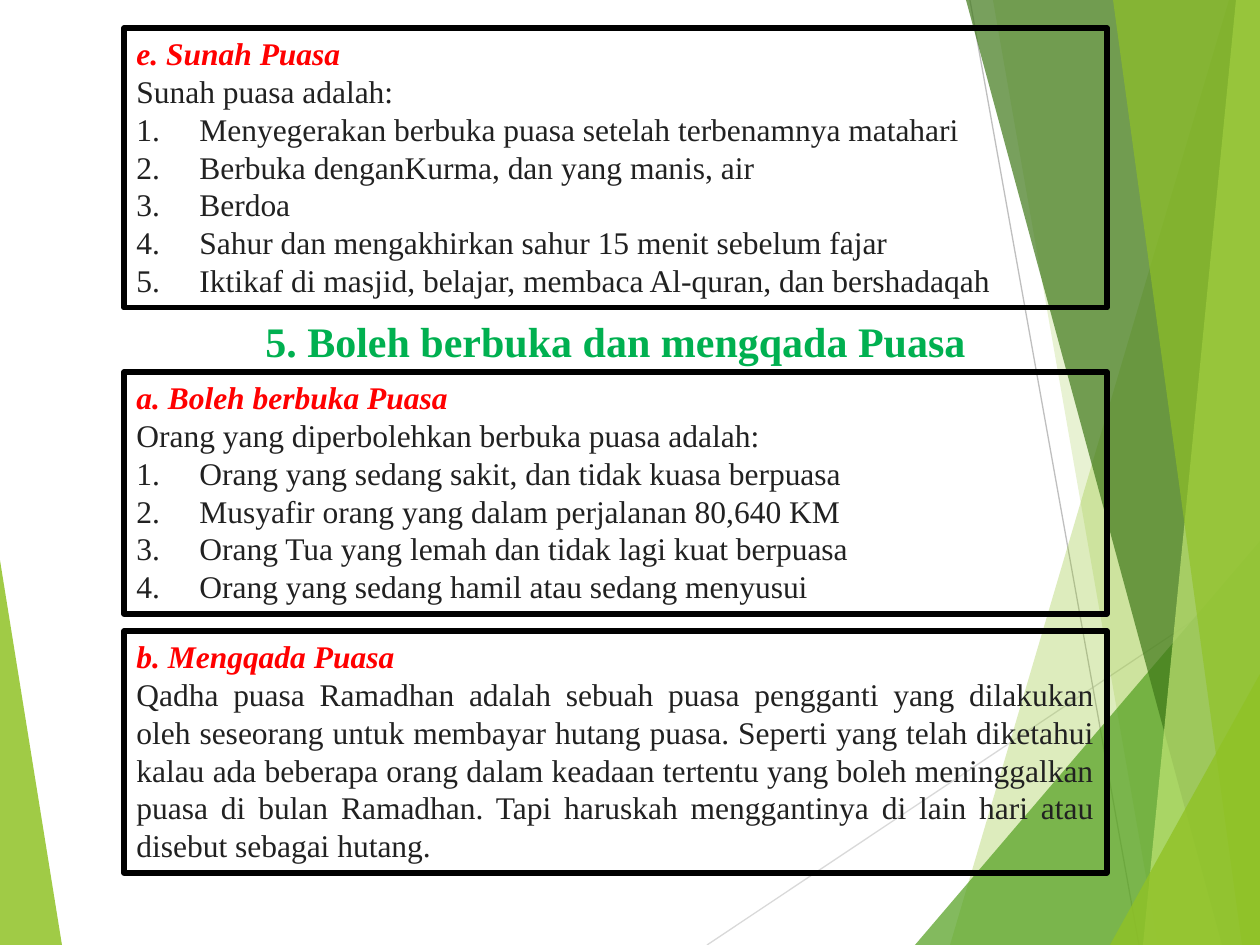
from lxml import etree
from pptx import Presentation, util as u
from pptx.dml.color import RGBColor
from pptx.enum import shapes, text
from pptx.oxml.ns import qn

PX = 914400 / 126
WIDTH, HEIGHT = 1260, 945
FONT = "Times New Roman"
COLORS = {
    "lime": "90C226", "green": "54A021", "dark": "3F7819", "pale": "C0E474",
    "grey": "BFBFBF", "light": "D9D9D9", "border": "000000",
    "heading": "FF0000", "body": "212121", "title": "00B050",
}

# colour, opacity in percent, corner points
LEFT_FACET = ("lime", 85, [(0, 560), (62, HEIGHT), (0, HEIGHT)])
RIGHT_FACETS = [
    ("lime", 30, [(1229, 0), (950, HEIGHT), (WIDTH, HEIGHT), (WIDTH, 0)]),
    ("lime", 20, [(993, 0), (1158, HEIGHT), (WIDTH, HEIGHT), (WIDTH, 0)]),
    ("green", 72, [(915, HEIGHT), (WIDTH, 541), (WIDTH, HEIGHT)]),
    ("dark", 70, [(966, 0), (1222, HEIGHT), (WIDTH, HEIGHT), (WIDTH, 0)]),
    ("pale", 70, [(1236, 0), (1143, HEIGHT), (WIDTH, HEIGHT), (WIDTH, 0)]),
    ("lime", 65, [(1113, 0), (1242, HEIGHT), (WIDTH, HEIGHT), (WIDTH, 0)]),
    ("lime", 80, [(1110, HEIGHT), (WIDTH, 674), (WIDTH, HEIGHT)]),
]
RAYS = [("light", (707, HEIGHT), (WIDTH, 576)), ("grey", (970, 0), (1139, HEIGHT))]

BOX_LEFT, BOX_WIDTH = 124, 983
TITLE = (309, 57, "5. Boleh berbuka dan mengqada Puasa")
# top, height, heading, introduction, numbered items
BOXES = [
    (28, 280, "e. Sunah Puasa", "Sunah puasa adalah:", [
        "Menyegerakan berbuka puasa setelah terbenamnya matahari",
        "Berbuka denganKurma, dan yang manis, air",
        "Berdoa",
        "Sahur dan mengakhirkan sahur 15 menit sebelum fajar",
        "Iktikaf di masjid, belajar, membaca Al-quran, dan bershadaqah",
    ]),
    (372, 242, "a. Boleh berbuka Puasa", "Orang yang diperbolehkan berbuka puasa adalah:", [
        "Orang yang sedang sakit, dan tidak kuasa berpuasa",
        "Musyafir orang yang dalam perjalanan 80,640 KM",
        "Orang Tua yang lemah dan tidak lagi kuat berpuasa",
        "Orang yang sedang hamil atau sedang menyusui",
    ]),
    (631, 242, "b. Mengqada Puasa",
     "Qadha puasa Ramadhan adalah sebuah puasa pengganti yang dilakukan oleh "
     "seseorang untuk membayar hutang puasa. Seperti yang telah diketahui kalau "
     "ada beberapa orang dalam keadaan tertentu yang boleh meninggalkan puasa di "
     "bulan Ramadhan. Tapi haruskah menggantinya di lain hari atau disebut "
     "sebagai hutang.", []),
]
STYLES = {
    "heading": {"size": u.Pt(18), "bold": True, "italic": True},
    "body": {"size": u.Pt(18), "bold": False, "italic": False},
    "title": {"size": u.Pt(24), "bold": True, "italic": False},
}


def px(value):
    return u.Emu(round(value * PX))


def rgb(name):
    return RGBColor.from_string(COLORS[name])


def add_facet(slide, color, opacity, points):
    builder = slide.shapes.build_freeform(*points[0], scale=PX)
    builder.add_line_segments(points[1:], close=True)
    shape = builder.convert_to_shape()
    shape.shadow.inherit = False
    shape.fill.solid()
    shape.fill.fore_color.rgb = rgb(color)
    shape.line.fill.background()
    solid_color = shape.fill._xPr.find(qn("a:solidFill"))[0]
    etree.SubElement(solid_color, qn("a:alpha"), val=str(opacity * 1000))


def add_ray(slide, color, start, end):
    line = slide.shapes.add_connector(
        shapes.MSO_CONNECTOR.STRAIGHT, *map(px, start + end))
    line.line.color.rgb = rgb(color)
    line.line.width = u.Pt(0.75)
    etree.SubElement(line._element.spPr, qn("a:effectLst"))


def write_paragraph(paragraph, content, style, alignment, numbered=False):
    if numbered:
        properties = paragraph._p.get_or_add_pPr()
        properties.set("marL", str(u.Inches(0.5)))
        properties.set("indent", str(-u.Inches(0.5)))
        etree.SubElement(properties, qn("a:buFont"), typeface="+mj-lt")
        etree.SubElement(properties, qn("a:buAutoNum"), type="arabicPeriod")
    paragraph.alignment = alignment
    run = paragraph.add_run()
    run.text = content
    run.font.name = FONT
    run.font.color.rgb = rgb(style)
    for name, value in STYLES[style].items():
        setattr(run.font, name, value)


def add_box(slide, top, height, heading, introduction, items):
    box = slide.shapes.add_shape(
        shapes.MSO_SHAPE.RECTANGLE, *map(px, (BOX_LEFT, top, BOX_WIDTH, height)))
    box.shadow.inherit = False
    box.fill.background()
    box.line.color.rgb = rgb("border")
    box.line.width = u.Pt(3)
    etree.SubElement(box.line._get_or_add_ln(), qn("a:round"))
    frame = box.text_frame
    frame.word_wrap = True
    frame.vertical_anchor = text.MSO_ANCHOR.TOP
    justify = text.PP_ALIGN.JUSTIFY
    write_paragraph(frame.paragraphs[0], heading, "heading", justify)
    write_paragraph(frame.add_paragraph(), introduction, "body", justify)
    for item in items:
        write_paragraph(frame.add_paragraph(), item, "body", justify, numbered=True)


def add_title(slide, top, height, content):
    title = slide.shapes.add_textbox(*map(px, (BOX_LEFT, top, BOX_WIDTH, height)))
    title.text_frame.word_wrap = True
    write_paragraph(title.text_frame.paragraphs[0], content, "title",
                    text.PP_ALIGN.CENTER)


def main():
    presentation = Presentation()
    presentation.slide_width, presentation.slide_height = px(WIDTH), px(HEIGHT)
    slide = presentation.slides.add_slide(presentation.slide_layouts[6])
    add_facet(slide, *LEFT_FACET)
    for ray in RAYS:
        add_ray(slide, *ray)
    for facet in RIGHT_FACETS:
        add_facet(slide, *facet)
    for box in BOXES:
        add_box(slide, *box)
    add_title(slide, *TITLE)
    presentation.save("out.pptx")


if __name__ == "__main__":
    main()
